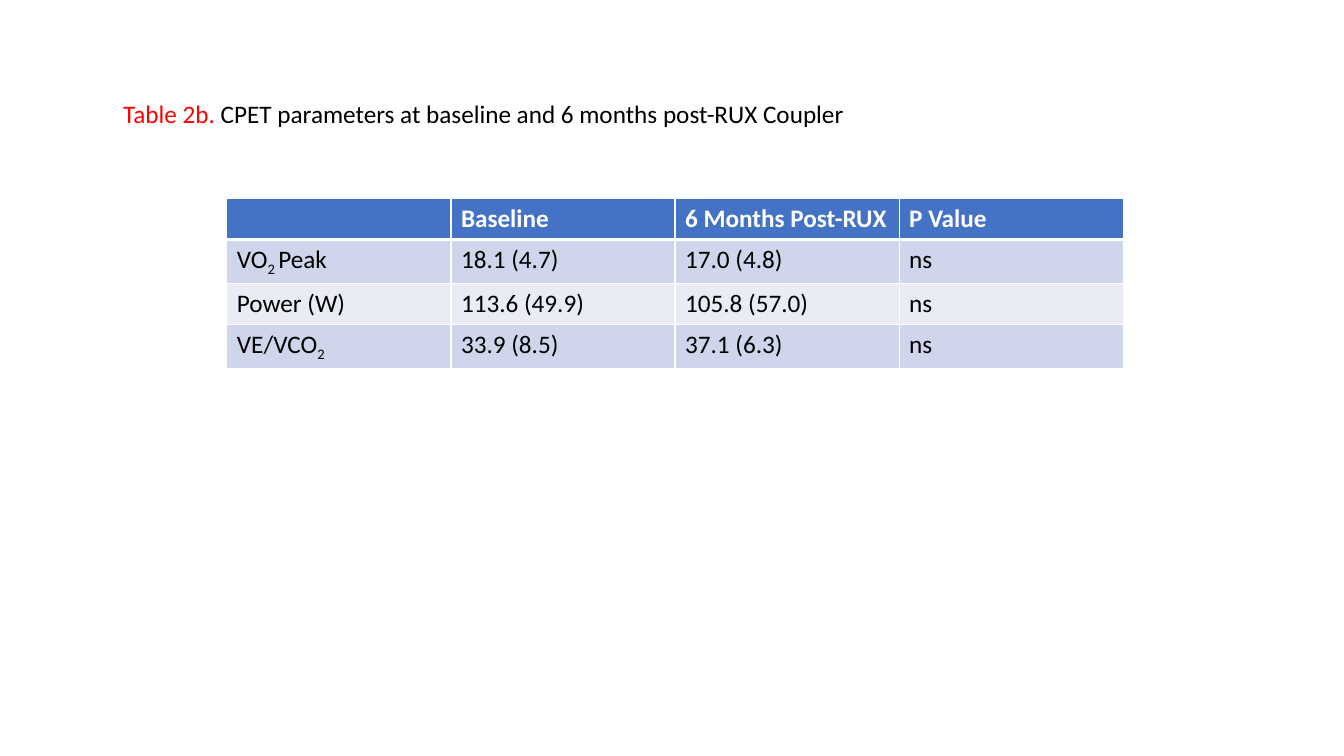
from dataclasses import dataclass

from lxml import etree
from pptx import Presentation
from pptx.dml.color import RGBColor
from pptx.enum.text import MSO_ANCHOR, MSO_AUTO_SIZE, PP_ALIGN
from pptx.oxml.ns import qn
from pptx.util import Inches, Pt

LEFT = PP_ALIGN.LEFT
TOP = MSO_ANCHOR.TOP
NO_AUTOFIT = MSO_AUTO_SIZE.NONE
TITLE_ONLY_LAYOUT = 5

CAPTION_LABEL = "Table 2b."
CAPTION_TEXT = " CPET parameters at baseline and 6 months post-RUX Coupler"
HEADER = ("", "Baseline", "6 Months Post-RUX", "P Value")
# A row label is (text, subscript, text after the subscript).
ROWS = [
    (("VO", "2 ", "Peak"), "18.1 (4.7)", "17.0 (4.8)", "ns"),
    (("Power (W)", "", ""), "113.6 (49.9)", "105.8 (57.0)", "ns"),
    (("VE/VCO", "2", ""), "33.9 (8.5)", "37.1 (6.3)", "ns"),
]


@dataclass(frozen=True)
class Theme:
    font: str = "Calibri"
    size: int = 18
    text: str = "000000"
    label: str = "FF0000"
    header_text: str = "FFFFFF"
    header_fill: str = "4472C4"
    band_fills: tuple = ("CFD5EA", "E9EBF5")
    border: str = "FFFFFF"
    thin: int = 1
    thick: int = 3


THEME = Theme()


def add_text(paragraph, text, color=THEME.text, bold=False, subscript=False):
    run = paragraph.add_run()
    run.text = text
    font = run.font
    font.name, font.size, font.bold = THEME.font, Pt(THEME.size), bold
    font.color.rgb = RGBColor.from_string(color)
    if subscript:
        run._r.get_or_add_rPr().set("baseline", "-25000")


def style_cell(cell, fill, top, bottom):
    """Draw the four borders (top and bottom in points), then the fill."""
    properties = cell._tc.get_or_add_tcPr()
    widths = {"lnL": THEME.thin, "lnR": THEME.thin, "lnT": top, "lnB": bottom}
    for side, width in widths.items():
        line = etree.SubElement(properties, qn(f"a:{side}"), w=str(Pt(width)))
        solid = etree.SubElement(line, qn("a:solidFill"))
        etree.SubElement(solid, qn("a:srgbClr"), val=THEME.border)
    cell.fill.solid()
    cell.fill.fore_color.rgb = RGBColor.from_string(fill)


def add_caption(slide):
    title = slide.shapes.title
    title.left, title.top = Inches(1.12), Inches(0.93)
    title.width, title.height = Inches(8.02), Inches(0.4)
    frame = title.text_frame
    frame.word_wrap = True
    frame.auto_size = NO_AUTOFIT
    frame.vertical_anchor = TOP
    paragraph = frame.paragraphs[0]
    paragraph.alignment = LEFT
    add_text(paragraph, CAPTION_LABEL, color=THEME.label)
    add_text(paragraph, CAPTION_TEXT)


def add_results_table(slide):
    table = slide.shapes.add_table(
        len(ROWS) + 1, len(HEADER),
        Inches(2.25), Inches(1.97), Inches(8.89), Inches(1.62),
    ).table
    for column, heading in enumerate(HEADER):
        cell = table.cell(0, column)
        style_cell(cell, THEME.header_fill, THEME.thin, THEME.thick)
        if heading:
            add_text(cell.text_frame.paragraphs[0], heading,
                     color=THEME.header_text, bold=True)
    for row, (label, *values) in enumerate(ROWS, start=1):
        fill = THEME.band_fills[(row - 1) % 2]
        top = THEME.thick if row == 1 else THEME.thin
        for column, parts in enumerate([label, *[(value,) for value in values]]):
            cell = table.cell(row, column)
            style_cell(cell, fill, top, THEME.thin)
            for position, part in enumerate(parts):
                if part:
                    add_text(cell.text_frame.paragraphs[0], part,
                             subscript=position == 1)


def main():
    presentation = Presentation()
    presentation.slide_width = Inches(13.33)
    presentation.slide_height = Inches(7.5)
    layout = presentation.slide_layouts[TITLE_ONLY_LAYOUT]
    slide = presentation.slides.add_slide(layout)
    add_caption(slide)
    add_results_table(slide)
    presentation.save("out.pptx")


if __name__ == "__main__":
    main()
